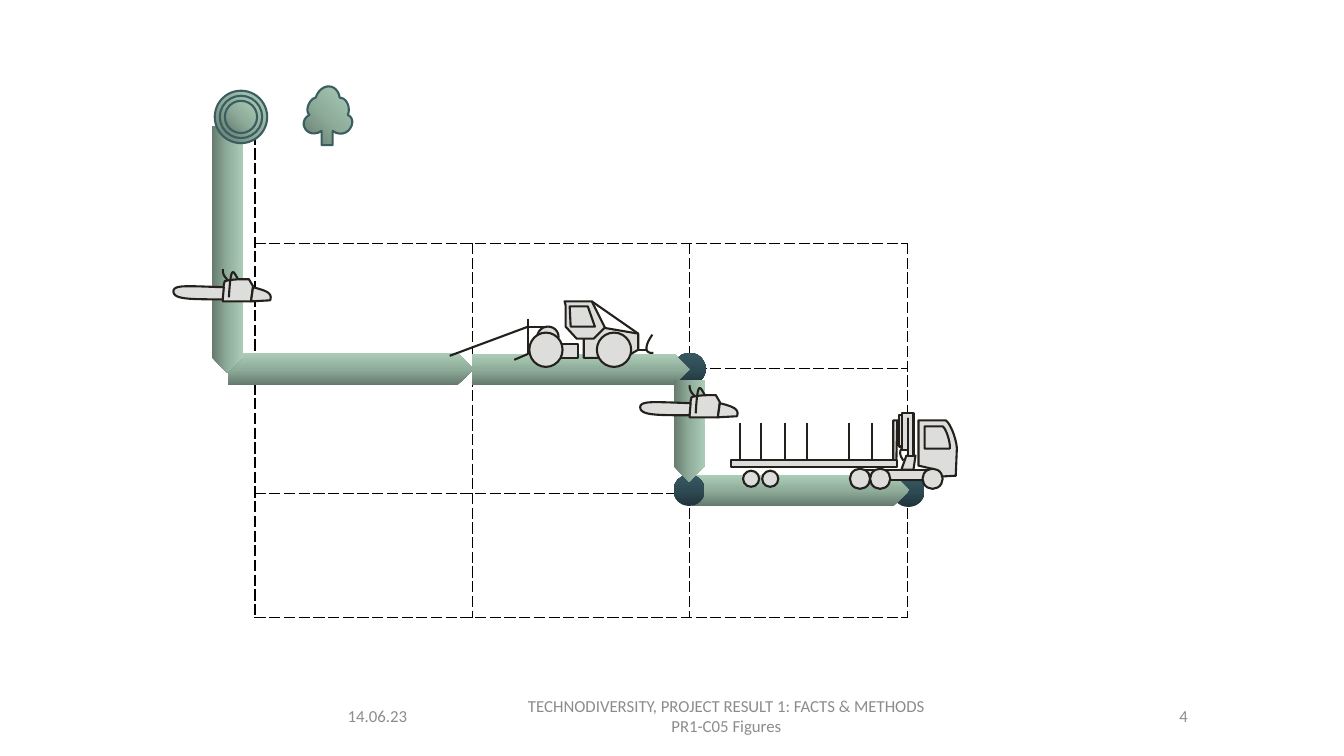
from copy import deepcopy
from typing import NamedTuple

from lxml import etree
from pptx import Presentation
from pptx.dml.color import RGBColor
from pptx.enum.shapes import MSO_CONNECTOR, MSO_SHAPE
from pptx.enum.text import MSO_ANCHOR, PP_ALIGN
from pptx.oxml.ns import qn
from pptx.util import Inches, Pt

OVAL, RECT, ARROW = MSO_SHAPE.OVAL, MSO_SHAPE.RECTANGLE, MSO_SHAPE.PENTAGON
STRAIGHT = MSO_CONNECTOR.STRAIGHT
MIDDLE = MSO_ANCHOR.MIDDLE
LEFT, CENTER, RIGHT = PP_ALIGN.LEFT, PP_ALIGN.CENTER, PP_ALIGN.RIGHT
CURVE_STEPS = 12


class Style(NamedTuple):
    fill: tuple[str, ...]
    line: str = ""
    angle: int = 0


class Preset(NamedTuple):
    kind: int
    x: float
    y: float
    w: float
    h: float
    rotation: int = 0


class Line(NamedTuple):
    x1: float
    y1: float
    x2: float
    y2: float


class Path(NamedTuple):
    points: tuple[tuple[float, ...], ...]
    closed: bool = True


class Footer(NamedTuple):
    x: float
    w: float
    align: int
    lines: tuple[str, ...]


GREEN = ("657A6D", "90AD9B", "ABCDB7")
ROUTE = Style(GREEN, angle=90)
NODE = Style(("21343B", "2E4B53", "375863"), angle=90)
WOOD = Style(GREEN, "395D61", 45)
MACHINE = Style(("DDDDDC",), "24211D")

TREE = [Path(((3.19, 1.44), (3.3, 1.44), (3.3, 1.3), (3.45, 1.4, 3.56, 1.19, 3.45, 1.14),
              (3.48, 1.07, 3.44, 0.97, 3.37, 0.97), (3.35, 0.83, 3.19, 0.81, 3.13, 0.97),
              (3.07, 0.98, 3.02, 1.1, 3.07, 1.14), (2.94, 1.21, 3.05, 1.39, 3.19, 1.3)))]
STUMP = [Preset(OVAL, 2.13 + inset, 0.9 + inset, 0.52 - 2 * inset, 0.52 - 2 * inset)
         for inset in (0, 0.05, 0.1)]
SKIDDER = [
    Preset(OVAL, 5.33, 3.24, 0.21, 0.2),
    Preset(RECT, 5.3, 3.41, 0.43, 0.14),
    Path(((5.79, 3.24), (5.79, 3.55), (6.19, 3.55), (6.33, 3.47), (6.33, 3.31), (5.92, 3.24))),
    Preset(OVAL, 5.92, 3.3, 0.34, 0.34),
    Preset(OVAL, 5.25, 3.3, 0.33, 0.34),
    Path(((5.61, 3.03), (5.61, 3.24), (5.72, 3.36), (5.89, 3.36), (6, 3.25), (5.87, 2.99),
          (5.6, 2.99))),
    Path(((5.65, 3.04), (5.66, 3.24), (5.9, 3.24), (5.83, 3.04))),
    Line(5.87, 2.99, 6.33, 3.31),
    Line(5.24, 3.51, 5.1, 3.57),
    Line(5.24, 3.24, 4.46, 3.53),
    Line(5.24, 3.16, 5.24, 3.51),
    Line(5.43, 3.24, 5.25, 3.24),
    Line(6.33, 3.47, 6.41, 3.47),
    Path(((6.47, 3.32), (6.36, 3.48, 6.43, 3.51, 6.48, 3.5)), False),
]
CHAINSAW = [
    Path(((2.21, 2.99), (2.49, 2.99), (2.51, 2.84), (2.47, 2.77),
          (2.37, 2.77, 2.3, 2.77, 2.23, 2.79), (2.21, 2.85, 2.21, 2.92, 2.21, 2.99))),
    Path(((2.49, 2.99), (2.68, 2.98), (2.71, 2.9, 2.62, 2.88, 2.51, 2.85))),
    Path(((2.36, 2.77), (2.31, 2.68, 2.29, 2.62, 2.27, 2.95)), False),
    Path(((2.26, 2.78), (2.21, 2.73, 2.21, 2.7, 2.21, 2.67)), False),
    Path(((2.21, 2.97), (1.87, 2.97, 1.72, 2.97, 1.72, 2.89),
          (1.72, 2.82, 1.88, 2.84, 2.22, 2.85))),
]
TRUCK = [
    Preset(RECT, 8.92, 4.12, 0.14, 0.31),
    Path(((9.38, 4.17), (9.11, 4.17), (9.11, 4.62), (9.24, 4.65), (9.3, 4.73), (9.48, 4.72),
          (9.49, 4.47), (9.5, 4.41, 9.44, 4.21, 9.38, 4.17))),
    Path(((9.35, 4.23), (9.17, 4.23), (9.17, 4.45), (9.42, 4.45),
          (9.43, 4.41, 9.39, 4.26, 9.35, 4.23))),
    Preset(RECT, 8.51, 4.66, 0.74, 0.1),
    *[Preset(OVAL, x, 4.65, 0.2, 0.2) for x in (8.43, 8.63, 9.15)],
    *[Line(x, 4.2, x, 4.55) for x in (7.34, 7.55, 7.79, 8, 8.42, 8.65)],
    Path(((8.86, 4.61), (8.86, 4.17), (8.9, 4.17), (8.89, 4.61))),
    Preset(RECT, 7.25, 4.56, 1.65, 0.07),
    *[Preset(OVAL, x, 4.67, 0.16, 0.16) for x in (7.37, 7.56)],
    Path(((9.02, 4.57), (9.14, 4.37, 8.83, 4.4, 8.96, 4.57)), False),
    Path(((8.99, 4.52), (8.94, 4.66), (9.06, 4.66), (9.08, 4.52))),
    Path(((9.06, 4.52), (9.06, 4.1), (8.95, 4.1), (8.95, 4.46), (9.01, 4.46), (9.01, 4.15),
          (9.01, 4.52))),
]
FOOTERS = [
    Footer(3.35, 1.34, LEFT, ("14.06.23",)),
    Footer(4.86, 4.69, CENTER,
           ("TECHNODIVERSITY, PROJECT RESULT 1: FACTS & METHODS", "PR1-C05 Figures")),
    Footer(9.77, 2.11, RIGHT, ("4",)),
]


def rgb(value: str) -> RGBColor:
    return RGBColor.from_string(value)


def flatten(points: tuple[tuple[float, ...], ...]) -> list[tuple[float, float]]:
    result = [points[0]]
    for point in points[1:]:
        if len(point) == 2:
            result.append(point)
            continue
        x0, y0 = result[-1]
        x1, y1, x2, y2, x3, y3 = point
        for step in range(1, CURVE_STEPS + 1):
            t = step / CURVE_STEPS
            a, b, c, d = (1 - t) ** 3, 3 * t * (1 - t) ** 2, 3 * t * t * (1 - t), t ** 3
            result.append((a * x0 + b * x1 + c * x2 + d * x3, a * y0 + b * y1 + c * y2 + d * y3))
    return result


def paint(shape, style: Style, filled: bool) -> None:
    shape.shadow.inherit = False
    fill = shape.fill
    if not filled:
        fill.background()
    elif len(style.fill) == 1:
        fill.solid()
        fill.fore_color.rgb = rgb(style.fill[0])
    else:
        fill.gradient()
        fill.gradient_angle = style.angle
        stops = shape._element.spPr.find(".//" + qn("a:gsLst"))
        stops.append(deepcopy(stops[0]))
        for stop, color, position in zip(fill.gradient_stops, style.fill, (0, 0.5, 1)):
            stop.color.rgb = rgb(color)
            stop.position = position
    if style.line:
        shape.line.color.rgb = rgb(style.line)
        shape.line.width = Pt(1.5)
    else:
        shape.line.fill.background()


def draw(shapes, parts: list, style: Style, dx: float = 0, dy: float = 0) -> None:
    for part in parts:
        if isinstance(part, Line):
            ends = (part.x1 + dx, part.y1 + dy, part.x2 + dx, part.y2 + dy)
            c = shapes.add_connector(STRAIGHT, *map(Inches, ends))
            c.line.color.rgb = rgb(style.line)
            c.line.width = Pt(1.5)
            etree.SubElement(c._element.spPr, qn("a:effectLst"))
        elif isinstance(part, Path):
            points = [(Inches(x + dx), Inches(y + dy)) for x, y in flatten(part.points)]
            builder = shapes.build_freeform(*points[0])
            builder.add_line_segments(points[1:], close=part.closed)
            paint(builder.convert_to_shape(), style, part.closed)
        else:
            box = (part.x + dx, part.y + dy, part.w, part.h)
            shape = shapes.add_shape(part.kind, *map(Inches, box))
            shape.rotation = part.rotation
            paint(shape, style, True)


def draw_group(s, parts: list, style: Style, dx: float = 0, dy: float = 0) -> None:
    draw(s.shapes.add_group_shape().shapes, parts, style, dx, dy)


def set_borders(cell, shown: str) -> None:
    tc_pr = cell._tc.get_or_add_tcPr()
    for side in "LRTB":
        ln = etree.SubElement(tc_pr, qn(f"a:ln{side}"), w=str(Pt(1)))
        if side in shown:
            fill = etree.SubElement(ln, qn("a:solidFill"))
            etree.SubElement(fill, qn("a:srgbClr"), val="000000")
            etree.SubElement(ln, qn("a:prstDash"), val="dash")
        else:
            etree.SubElement(ln, qn("a:noFill"))
    cell.fill.background()


def add_grid(s) -> None:
    box = map(Inches, (2.53, 1.18, 6.47, 4.95))
    table = s.shapes.add_table(4, 3, *box).table
    table.first_row = table.horz_banding = False
    for r in range(4):
        for c in range(3):
            shown = "LRTB" if r else "LB" if c == 0 else "B"
            set_borders(table.cell(r, c), shown)


def add_footer(s, footer: Footer) -> None:
    tf = s.shapes.add_textbox(*map(Inches, (footer.x, 6.9, footer.w, 0.4))).text_frame
    tf.word_wrap = True
    tf.vertical_anchor = MIDDLE
    tf.text = "\n".join(footer.lines)
    for p in tf.paragraphs:
        p.alignment = footer.align
        p.font.name = "Calibri"
        p.font.size = Pt(12)
        p.font.color.rgb = rgb("8C8C8C")


def main() -> None:
    prs = Presentation()
    prs.slide_width, prs.slide_height = Inches(13.33), Inches(7.5)
    s = prs.slides.add_slide(prs.slide_layouts[6])
    for footer in FOOTERS:
        add_footer(s, footer)
    add_grid(s)
    draw(s.shapes, TREE, WOOD)
    draw(s.shapes, [Preset(OVAL, 8.85, 4.71, 0.32, 0.32)], NODE)
    draw(s.shapes, [Preset(ARROW, 6.86, 4.71, 2.16, 0.31)], ROUTE)
    draw(s.shapes, [Preset(OVAL, 6.68, 3.5, 0.32, 0.32)], NODE)
    draw(s.shapes, [Preset(ARROW, 4.68, 3.51, 2.16, 0.31), Preset(ARROW, 2.26, 3.5, 2.44, 0.32),
                    Preset(ARROW, 1.03, 2.32, 2.45, 0.31, 90)], ROUTE)
    draw_group(s, SKIDDER, MACHINE)
    draw_group(s, CHAINSAW, MACHINE)
    draw(s.shapes, [Preset(OVAL, 6.68, 4.71, 0.31, 0.31)], NODE)
    draw(s.shapes, [Preset(ARROW, 6.33, 4.12, 1.01, 0.31, 90)], ROUTE)
    draw_group(s, STUMP, WOOD)
    draw_group(s, CHAINSAW, MACHINE, 4.63, 1.15)
    draw_group(s, TRUCK, MACHINE)
    prs.save("out.pptx")


if __name__ == "__main__":
    main()
